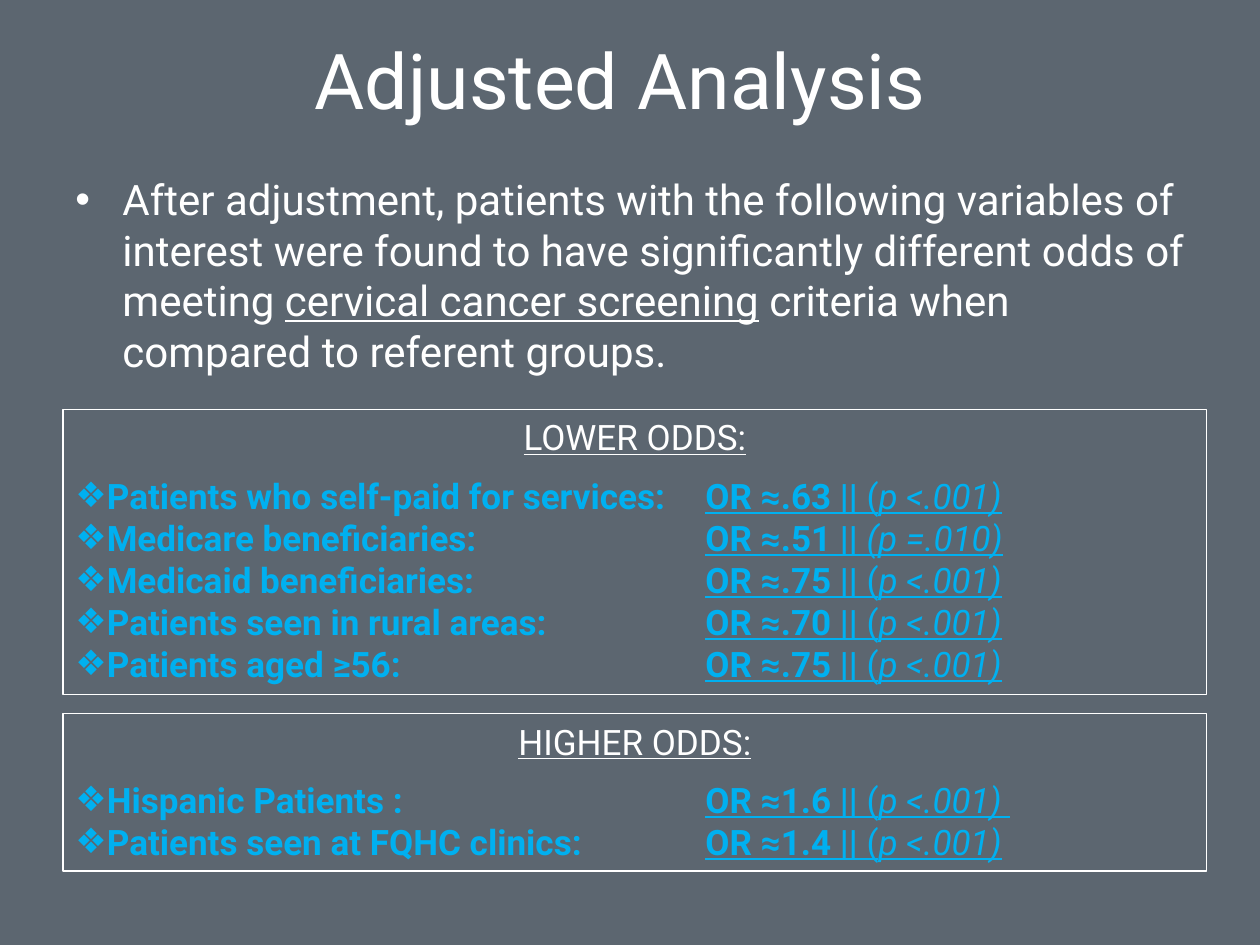
"""Build the slide on adjusted odds of cervical cancer screening."""
from dataclasses import dataclass

from lxml.etree import SubElement
from pptx import Presentation
from pptx.dml.color import RGBColor
from pptx.enum.shapes import MSO_SHAPE
from pptx.enum.text import MSO_ANCHOR, PP_ALIGN
from pptx.oxml.ns import qn
from pptx.util import Cm, Pt


@dataclass(frozen=True)
class Theme:
    font: str = "Roboto"
    back: RGBColor = RGBColor(0x5C, 0x66, 0x70)
    white: RGBColor = RGBColor(0xFF, 0xFF, 0xFF)
    blue: RGBColor = RGBColor(0x00, 0xB0, 0xF0)
    head: Pt = Pt(44)
    lead: Pt = Pt(24)
    small: Pt = Pt(20)


theme = Theme()


def add_run(para, text, size, color, bold=False, under=False, slant=False):
    run = para.add_run()
    run.text = text
    font = run.font
    font.name, font.size, font.color.rgb = theme.font, size, color
    font.bold, font.underline, font.italic = bold, under, slant


def add_mark(para, mark):
    props = para._p.get_or_add_pPr()
    SubElement(props, qn("a:buFont"), typeface="Arial")
    SubElement(props, qn("a:buChar"), char=mark)
    return props


deck = Presentation()
deck.slide_width, deck.slide_height = Cm(25.4), Cm(19.05)
slide = deck.slides.add_slide(deck.slide_layouts[5])
slide.background.fill.solid()
slide.background.fill.fore_color.rgb = theme.back
left, width = Cm(1.27), Cm(23.06)

title = slide.shapes.title
title.left, title.top, title.width, title.height = left, Cm(0), Cm(22.86), Cm(3.18)
title.text_frame.vertical_anchor = MSO_ANCHOR.MIDDLE
para = title.text_frame.paragraphs[0]
para.alignment = PP_ALIGN.CENTER
add_run(para, "Adjusted Analysis ", theme.head, theme.white)

lead = slide.shapes.add_textbox(left, Cm(3.38), width, Cm(4.6)).text_frame
lead.word_wrap = True
para = lead.paragraphs[0]
props = add_mark(para, "•")
props.set("marL", str(Cm(0.95)))
props.set("indent", str(-Cm(0.95)))
for text, under in (
    ("After adjustment, patients with the following variables of interest were "
     "found to have significantly different odds of meeting ", False),
    ("cervical cancer screening", True),
    (" criteria when compared to referent groups.", False),
):
    add_run(para, text, theme.lead, theme.white, under=under)

groups = (
    ("LOWER ODDS:", Cm(8.26), Cm(5.74), (
        ("Patients who self-paid for services:", ".63", "(", "p <.001)", ""),
        ("Medicare beneficiaries:", ".51", "", "(p =.010)", ""),
        ("Medicaid beneficiaries:", ".75", "(", "p <.001)", ""),
        ("Patients seen in rural areas:", ".70", "(", "p <.001)", ""),
        ("Patients aged ≥56:", ".75", "(", "p <.001)", ""),
    )),
    ("HIGHER ODDS:", Cm(14.39), Cm(3.17), (
        ("Hispanic Patients :", "1.6", "(", "p <.001)", " "),
        ("Patients seen at FQHC clinics:", "1.4", "(", "p <.001)", ""),
    )),
)
for head, top, height, rows in groups:
    box = slide.shapes.add_shape(MSO_SHAPE.RECTANGLE, left, top, width, height)
    box.shadow.inherit = False
    box.fill.background()
    box.line.color.rgb, box.line.width = theme.white, Pt(0.75)
    frame = box.text_frame
    frame.word_wrap, frame.vertical_anchor = True, MSO_ANCHOR.TOP
    para = frame.paragraphs[0]
    para.alignment, para.space_after = PP_ALIGN.CENTER, Pt(9.4)
    add_run(para, head, theme.small, theme.white, under=True)
    for name, odds, brace, prob, tail in rows:
        para = frame.add_paragraph()
        para.alignment = PP_ALIGN.LEFT
        tabs = SubElement(add_mark(para, "❖"), qn("a:tabLst"))
        SubElement(tabs, qn("a:tab"), pos=str(Cm(12.7)), algn="l")
        for text, bold, under, slant in (
            (f"{name}\t", True, False, False),
            (f"OR ≈{odds} || ", True, True, False),
            (brace, False, True, False),
            (prob, False, True, True),
            (tail, False, True, False),
        ):
            if text:
                add_run(para, text, theme.small, theme.blue, bold, under, slant)

deck.save("out.pptx")
